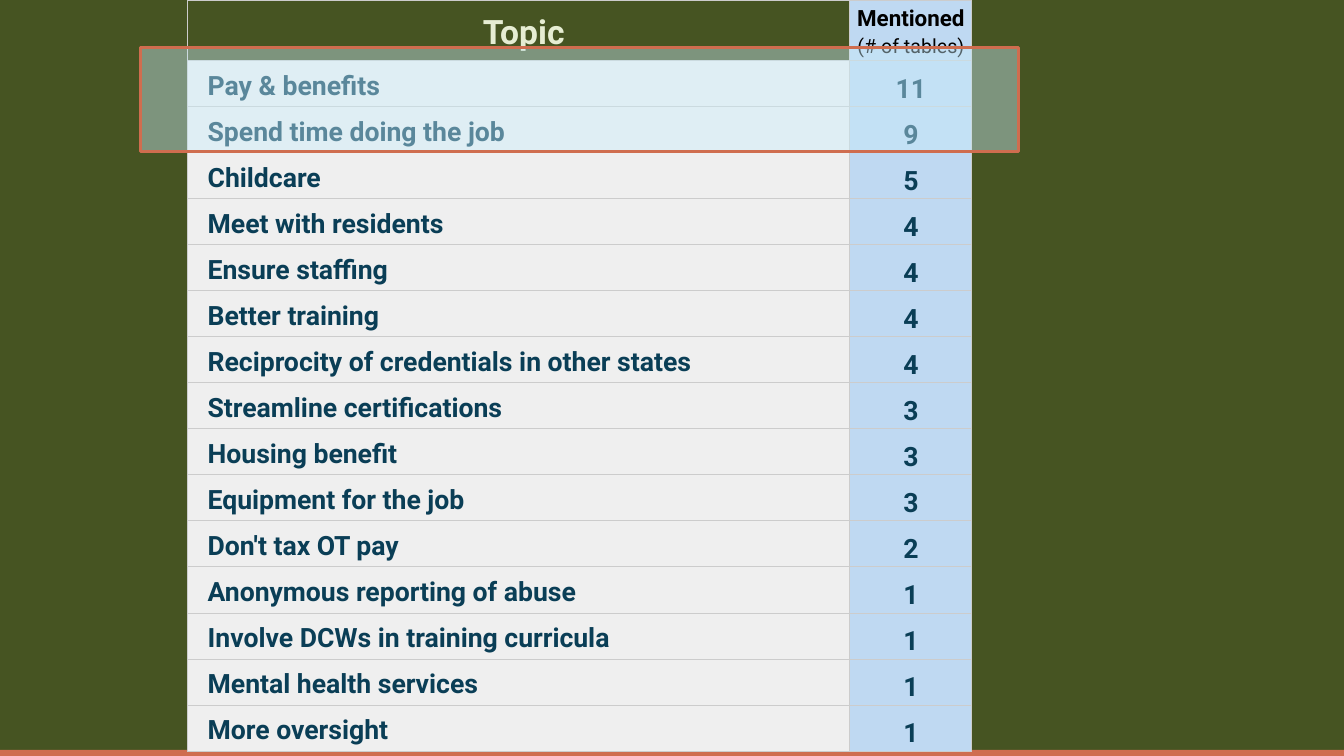
from dataclasses import dataclass

from lxml import etree
from pptx import Presentation
from pptx import util as u
from pptx.dml.color import RGBColor
from pptx.enum import shapes, text
from pptx.oxml import ns


@dataclass(frozen=True)
class Theme:
    font: str = "Roboto"
    olive: str = "465422"
    coral: str = "CF6D4F"
    cream: str = "E6EDD3"
    sky: str = "BFD9F2"
    glow: str = "CAEEFB"
    paper: str = "EFEFEF"
    navy: str = "0A3E56"
    black: str = "000000"
    rule: str = "CCCCCC"
    heading_size: int = 24
    count_heading_size: int = 16
    count_note_size: int = 14
    body_size: int = 19


THEME = Theme()
TOPICS = [
    ("Pay & benefits", 11),
    ("Spend time doing the job", 9),
    ("Childcare", 5),
    ("Meet with residents", 4),
    ("Ensure staffing", 4),
    ("Better training", 4),
    ("Reciprocity of credentials in other states", 4),
    ("Streamline certifications", 3),
    ("Housing benefit", 3),
    ("Equipment for the job", 3),
    ("Don't tax OT pay", 2),
    ("Anonymous reporting of abuse", 1),
    ("Involve DCWs in training curricula", 1),
    ("Mental health services", 1),
    ("More oversight", 1),
]


def paint(fill, color):
    fill.solid()
    fill.fore_color.rgb = RGBColor.from_string(color)


def add_borders(cell):
    properties = cell._tc.get_or_add_tcPr()
    for side in ("lnL", "lnR", "lnT", "lnB"):
        border = etree.SubElement(properties, ns.qn(f"a:{side}"), w=str(u.Pt(0.75)))
        solid = etree.SubElement(border, ns.qn("a:solidFill"))
        etree.SubElement(solid, ns.qn("a:srgbClr"), val=THEME.rule)


def fill_cell(cell, lines, background, margins, anchor, align):
    add_borders(cell)
    paint(cell.fill, background)
    cell.vertical_anchor = anchor
    left, vertical = margins
    cell.margin_left, cell.margin_right = u.Inches(left), u.Inches(0.03)
    cell.margin_top = cell.margin_bottom = u.Inches(vertical)
    cell.text_frame.text = "\n".join(line[0] for line in lines)
    for paragraph, (_, size, color, bold) in zip(cell.text_frame.paragraphs, lines):
        paragraph.alignment = align
        paragraph.line_spacing = 1.15
        paragraph.font.name = THEME.font
        paragraph.font.size = u.Pt(size)
        paragraph.font.bold = bold
        paragraph.font.color.rgb = RGBColor.from_string(color)


def add_topic_table(slide, left, top, topic_width, count_width, row_height):
    row_count = len(TOPICS) + 1
    table = slide.shapes.add_table(
        row_count, 2, u.Inches(left), u.Inches(top),
        u.Inches(topic_width + count_width), u.Inches(row_height * row_count),
    ).table
    table.first_row = table.horz_banding = False
    table.columns[0].width = u.Inches(topic_width)
    table.columns[1].width = u.Inches(count_width)

    middle, bottom = text.MSO_ANCHOR.MIDDLE, text.MSO_ANCHOR.BOTTOM
    start, center = text.PP_ALIGN.LEFT, text.PP_ALIGN.CENTER
    tight = (0.03, 0.02)
    fill_cell(table.cell(0, 0), [("Topic", THEME.heading_size, THEME.cream, True)],
              THEME.olive, (0.13, 0.02), middle, center)
    count_heading = [
        ("Mentioned", THEME.count_heading_size, THEME.black, True),
        ("(# of tables)", THEME.count_note_size, THEME.black, False),
    ]
    fill_cell(table.cell(0, 1), count_heading, THEME.sky, tight, middle, center)
    for row, (topic, count) in enumerate(TOPICS, 1):
        fill_cell(table.cell(row, 0), [(topic, THEME.body_size, THEME.navy, True)],
                  THEME.paper, (0.2, 0.05), middle, start)
        fill_cell(table.cell(row, 1), [(str(count), THEME.body_size, THEME.navy, True)],
                  THEME.sky, tight, bottom, center)


def add_panel(slide, left, top, width, height, color):
    panel = slide.shapes.add_shape(
        shapes.MSO_SHAPE.RECTANGLE,
        u.Inches(left), u.Inches(top), u.Inches(width), u.Inches(height),
    )
    panel.shadow.inherit = False
    paint(panel.fill, color)
    panel.line.fill.background()
    return panel


def add_highlight(slide, left, top, width, height):
    highlight = add_panel(slide, left, top, width, height, THEME.glow)
    tint = highlight.fill._xPr.find(f".//{ns.qn('a:srgbClr')}")
    etree.SubElement(tint, ns.qn("a:alpha"), val="42000")
    paint(highlight.line.fill, THEME.coral)
    highlight.line.width = u.Pt(2.25)


def main():
    deck = Presentation()
    deck.slide_width, deck.slide_height = u.Inches(13.33), u.Inches(7.5)
    slide = deck.slides.add_slide(deck.slide_layouts[6])
    paint(slide.background.fill, THEME.olive)
    add_panel(slide, 0, 7.44, 13.33, 0.3, THEME.coral)
    add_topic_table(slide, 1.86, 0, 6.57, 1.21, 0.36)
    add_highlight(slide, 1.39, 0.47, 8.71, 1.03)
    deck.save("out.pptx")


if __name__ == "__main__":
    main()
